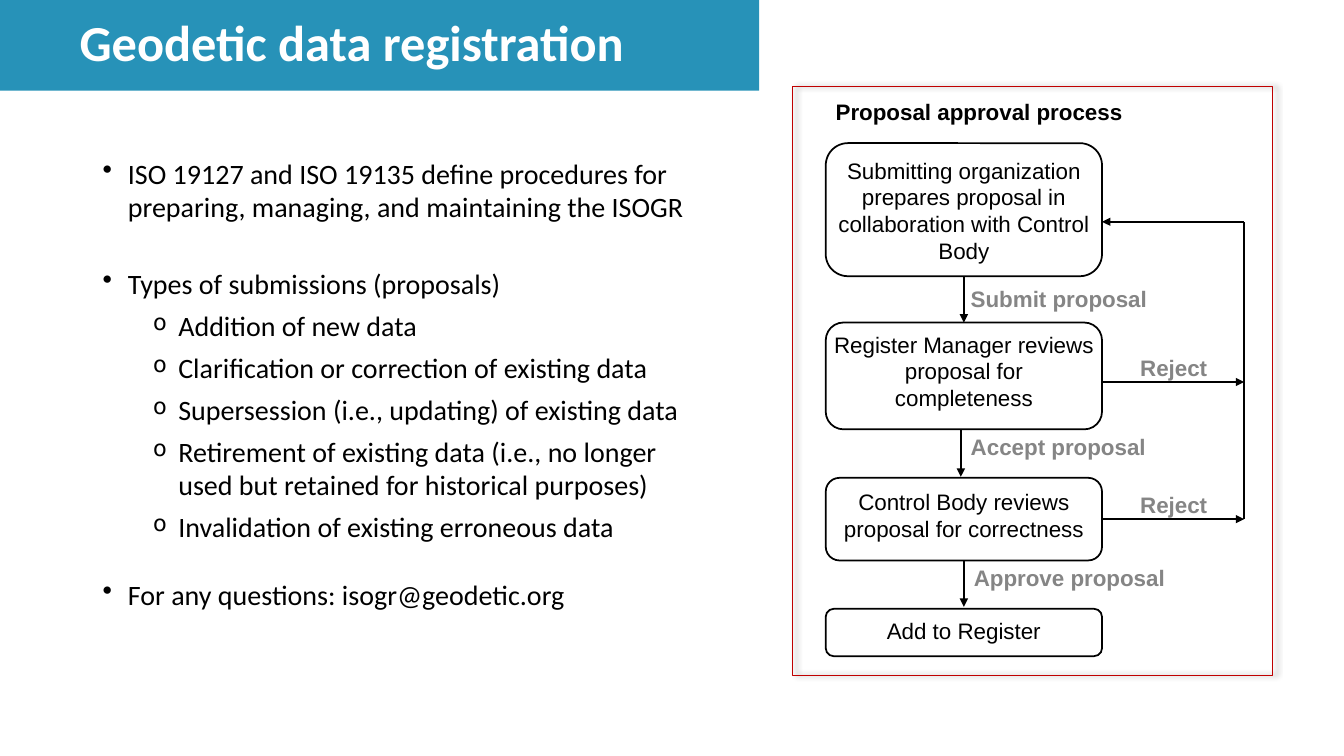
import pptx
import pptx.util
import pptx.dml.color
import pptx.enum.shapes
import pptx.enum.text
import pptx.oxml
import pptx.oxml.ns
import lxml.etree

Inches = pptx.util.Inches
Pt = pptx.util.Pt
Kind = pptx.enum.shapes.MSO_SHAPE
Align = pptx.enum.text.PP_ALIGN
Anchor = pptx.enum.text.MSO_ANCHOR
colours = {
    name: pptx.dml.color.RGBColor.from_string(value)
    for name, value in {
        "black": "000000", "white": "FFFFFF", "grey": "858585",
        "red": "C00000", "banner": "2792B8",
    }.items()
}


def add_span(para, text, size, font, colour, bold=False):
    span = para.add_run()
    span.text = text
    span.font.size = Pt(size)
    span.font.name = font
    span.font.bold = bold
    span.font.color.rgb = colours[colour]


def add_element(parent, tag, **attributes):
    return lxml.etree.SubElement(parent, pptx.oxml.ns.qn(tag), attributes)


deck = pptx.Presentation()
deck.slide_width = Inches(13.33)
deck.slide_height = Inches(7.5)
page = deck.slides.add_slide(deck.slide_layouts[6])

step_left, step_width, return_x = 8.19, 2.74, 12.34
step_right = step_left + step_width
steps = [
    (1.42, 1.32, 0.07, "Submitting organization prepares proposal in collaboration with Control Body"),
    (3.2, 1.06, 0.03, "Register Manager reviews proposal for completeness"),
    (4.74, 0.82, 0.06, "Control Body reviews proposal for correctness"),
    (6.04, 0.47, 0.06, "Add to Register"),
]
for top, height, inset, text in steps:
    box = page.shapes.add_shape(
        Kind.ROUNDED_RECTANGLE, Inches(step_left), Inches(top), Inches(step_width), Inches(height))
    box.shadow.inherit = False
    box.fill.background()
    box.line.color.rgb = colours["black"]
    box.line.width = Pt(1.25)
    frame = box.text_frame
    frame.word_wrap = True
    frame.vertical_anchor = Anchor.TOP
    frame.margin_left = frame.margin_right = Inches(0.02)
    frame.margin_top = Inches(inset)
    frame.margin_bottom = 0
    frame.paragraphs[0].alignment = Align.CENTER
    add_span(frame.paragraphs[0], text, 16, "Arial", "black")

arrows = [
    (9.56, 2.74, 9.56, 3.2, True),
    (9.53, 4.26, 9.53, 4.73, True),
    (9.56, 5.56, 9.56, 6.02, True),
    (step_right, 3.79, return_x, 3.79, True),
    (step_right, 5.15, return_x, 5.15, True),
    (return_x, 5.15, return_x, 2.2, False),
    (return_x, 2.2, step_right, 2.2, True),
]
for start_x, start_y, end_x, end_y, pointed in arrows:
    arrow = page.shapes.add_connector(
        pptx.enum.shapes.MSO_CONNECTOR.STRAIGHT,
        Inches(start_x), Inches(start_y), Inches(end_x), Inches(end_y))
    arrow.line.color.rgb = colours["black"]
    arrow.line.width = Pt(1.25)
    if pointed:
        add_element(arrow.line._get_or_add_ln(), "a:tailEnd", type="triangle")
    add_element(arrow._element.spPr, "a:effectLst")

labels = [
    (8.19, 0.92, 3.66, "Proposal approval process", "black"),
    (9.53, 2.78, 1.97, "Submit proposal", "grey"),
    (9.53, 4.25, 1.96, "Accept proposal", "grey"),
    (9.56, 5.55, 2.12, "Approve proposal", "grey"),
    (11.21, 3.46, 0.88, "Reject", "grey"),
    (11.21, 4.82, 0.88, "Reject", "grey"),
]
for left, top, width, text, colour in labels:
    label = page.shapes.add_textbox(Inches(left), Inches(top), Inches(width), Inches(0.37))
    label.text_frame.word_wrap = False
    # spacer
    add_span(label.text_frame.paragraphs[0], text, 16, "Arial", colour, True)

border = page.shapes.add_shape(
    Kind.RECTANGLE, Inches(7.86), Inches(0.86), Inches(4.76), Inches(5.84))
border.fill.background()
border.line.color.rgb = colours["red"]
border.line.width = Pt(1)
effects = add_element(border._element.spPr, "a:effectLst")
shadow = add_element(
    effects, "a:outerShdw", blurRad=str(Pt(4)), dist=str(Pt(3)), dir="0", algn="l", rotWithShape="0")
shade = add_element(shadow, "a:srgbClr", val=str(colours["black"]))
add_element(shade, "a:alpha", val="40000")

bullets = [
    (0, 0, "ISO 19127 and ISO 19135 define procedures for preparing, managing, and maintaining the ISOGR"),
    (0, 30.5, "Types of submissions (proposals)"),
    (1, 6, "Addition of new data"),
    (1, 6, "Clarification or correction of existing data"),
    (1, 6, "Supersession (i.e., updating) of existing data"),
    (1, 6, "Retirement of existing data (i.e., no longer used but retained for historical purposes)"),
    (1, 6, "Invalidation of existing erroneous data"),
    (0, 24, "For any questions: isogr@geodetic.org"),
]
body = page.shapes.add_textbox(Inches(0.92), Inches(1.5), Inches(6.12), Inches(5.67)).text_frame
body.word_wrap = True
for index, (level, gap, text) in enumerate(bullets):
    para = body.add_paragraph() if index else body.paragraphs[0]
    para.level = level
    para.space_before = Pt(gap)
    properties = para._p.get_or_add_pPr()
    properties.set("marL", str(Inches(0.25 + 0.5 * level)))
    properties.set("indent", str(Inches(-0.25)))
    if level:
        add_element(properties, "a:buSzPct", val="80000")
    add_element(properties, "a:buChar", char="•o"[level])
    add_span(para, text, 20, "Calibri", "black")

banner = page.shapes.add_shape(Kind.RECTANGLE, 0, 0, Inches(7.53), Inches(0.9))
banner.shadow.inherit = False
banner.fill.solid()
banner.fill.fore_color.rgb = colours["banner"]
banner.line.fill.background()
banner.text_frame.word_wrap = True
banner.text_frame.margin_left = Inches(0.79)
banner.text_frame.vertical_anchor = Anchor.MIDDLE
title = banner.text_frame.paragraphs[0]
title.alignment = Align.LEFT
title.line_spacing = 0.9
add_span(title, "Geodetic data registration", 36, "Calibri", "white", True)

deck.save("out.pptx")
